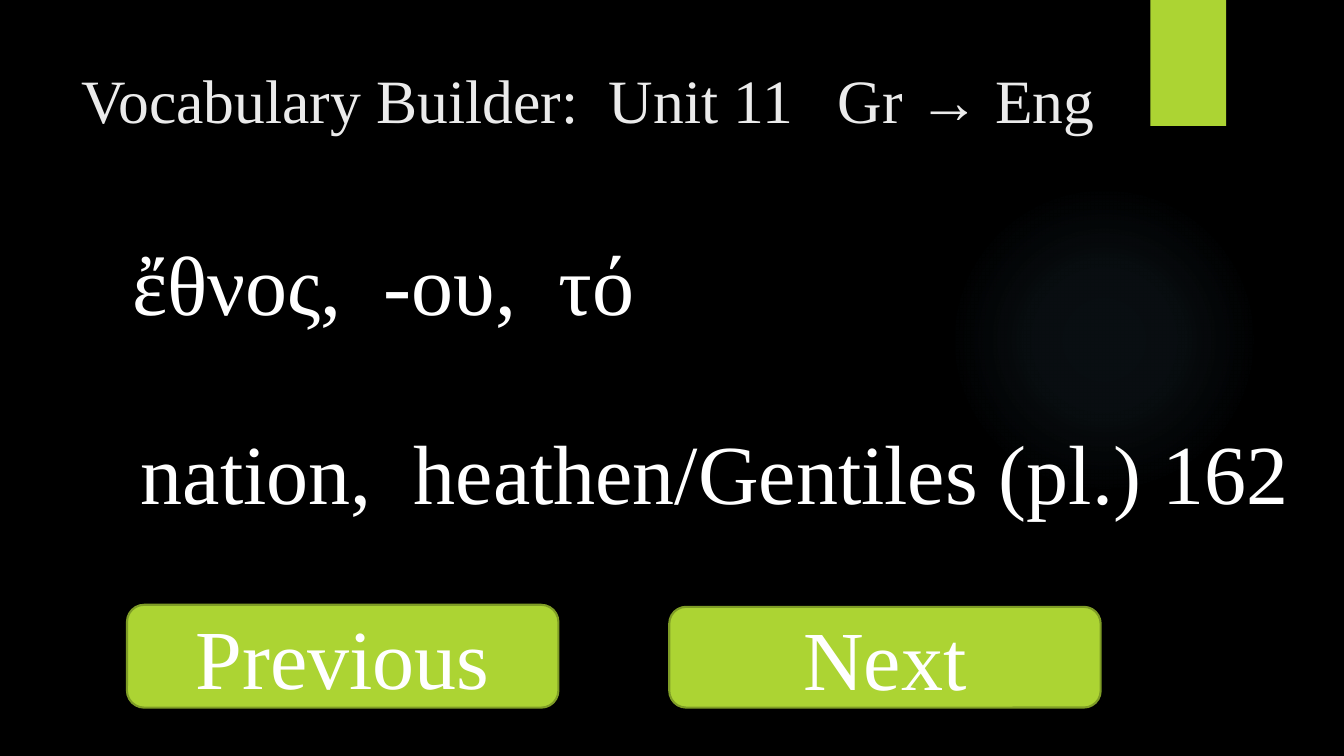
from lxml import etree
from pptx import Presentation
from pptx.dml.color import RGBColor
from pptx.enum.shapes import MSO_SHAPE
from pptx.enum.text import MSO_ANCHOR, MSO_AUTO_SIZE, PP_ALIGN
from pptx.oxml.ns import qn
from pptx.util import Inches, Pt

RECTANGLE, ROUNDED, ELLIPSE = MSO_SHAPE.RECTANGLE, MSO_SHAPE.ROUNDED_RECTANGLE, MSO_SHAPE.OVAL
TOP, MIDDLE = MSO_ANCHOR.TOP, MSO_ANCHOR.MIDDLE
LEFT, CENTER = PP_ALIGN.LEFT, PP_ALIGN.CENTER
FIXED, GROW = MSO_AUTO_SIZE.NONE, MSO_AUTO_SIZE.SHAPE_TO_FIT_TEXT

COLORS = {
    "background": "000000",
    "accent": "ACD433",
    "outline": "7F9D26",
    "title": "EBEBEB",
    "text": "FFFFFF",
    "glow": "7AC4F0",
}


def rgb(name):
    return RGBColor.from_string(COLORS[name])


class VocabularyCard:
    """Style and current slide; places are percentages of the slide's size."""

    font = "Times New Roman"
    title_size = 44
    text_size = 60

    def __init__(self, deck):
        self.deck = deck
        self.slide = deck.slides.add_slide(deck.slide_layouts[1])
        background = self.slide.background.fill
        background.solid()
        background.fore_color.rgb = rgb("background")

    def place(self, left, top, width, height):
        wide, high = self.deck.slide_width, self.deck.slide_height
        return [int(share * side / 100) for share, side in
                zip((left, top, width, height), (wide, high, wide, high))]

    def add_text(self, box, text, size=text_size, color="text", align=LEFT,
                 anchor=TOP, wrap=True, fit=FIXED, tab=None):
        frame = box.text_frame
        frame.word_wrap = wrap
        frame.auto_size = fit
        frame.vertical_anchor = anchor
        para = frame.paragraphs[0]
        para.alignment = align
        para.space_before = Pt(0)
        properties = para._p.get_or_add_pPr()
        properties.set("marL", "0")
        properties.set("indent", "0")
        etree.SubElement(properties, qn("a:buNone"))
        if tab:
            stops = etree.SubElement(properties, qn("a:tabLst"))
            etree.SubElement(stops, qn("a:tab"), pos=str(Inches(tab)), algn="l")
        span = para.add_run()
        span.text = text
        span.font.name = self.font
        span.font.size = Pt(size)
        span.font.color.rgb = rgb(color)

    def placeholder(self, index, area, text, **style):
        box = self.slide.placeholders[index]
        box.left, box.top, box.width, box.height = self.place(*area)
        self.add_text(box, text, **style)

    def text_box(self, area, text, **style):
        self.add_text(self.slide.shapes.add_textbox(*self.place(*area)), text, **style)

    def shape(self, kind, area):
        shape = self.slide.shapes.add_shape(kind, *self.place(*area))
        shape.shadow.inherit = False
        shape.fill.solid()
        shape.fill.fore_color.rgb = rgb("accent")
        shape.line.fill.background()
        return shape

    def send_to_back(self, shape):
        self.slide.shapes._spTree.insert(2, shape._element)

    def button(self, area, label):
        button = self.shape(ROUNDED, area)
        button.line.color.rgb = rgb("outline")
        button.line.width = Pt(1.5)
        self.add_text(button, label, align=CENTER, anchor=MIDDLE)

    def ribbon(self, area):
        self.send_to_back(self.shape(RECTANGLE, area))

    def glow(self, area, stops):
        glow = self.shape(ELLIPSE, area)
        gradient = etree.Element(qn("a:gradFill"), rotWithShape="1")
        stop_list = etree.SubElement(gradient, qn("a:gsLst"))
        for position, opacity in stops:
            stop = etree.SubElement(stop_list, qn("a:gs"), pos=str(position * 1000))
            color = etree.SubElement(stop, qn("a:srgbClr"), val=COLORS["glow"])
            etree.SubElement(color, qn("a:alpha"), val=str(opacity * 1000))
        circle = etree.SubElement(gradient, qn("a:path"), path="circle")
        center = {side: "50000" for side in "ltrb"}
        etree.SubElement(circle, qn("a:fillToRect"), **center)
        solid = glow._element.spPr.find(qn("a:solidFill"))
        solid.getparent().replace(solid, gradient)
        self.send_to_back(glow)


def main():
    deck = Presentation()
    deck.slide_width, deck.slide_height = Inches(13.33), Inches(7.5)
    card = VocabularyCard(deck)

    # Backdrop
    card.ribbon((85.6, 0, 5.63, 16.67))
    card.glow((70.59, 24.4, 23.1, 41.07), [(0, 7), (36, 6), (69, 0)])

    # Title, Greek word and its meaning
    card.placeholder(0, (5.33, 6.67, 81.25, 12.8),
                     "Vocabulary Builder:  Unit 11\tGr → Eng",
                     size=card.title_size, color="title", anchor=MIDDLE, tab=7.66)
    card.placeholder(1, (9.08, 30, 73.37, 20.67), "ἔθνος,  -ου,  τό")
    card.text_box((9.75, 54.93, 90.55, 14.8), "nation,  heathen/Gentiles (pl.) 162",
                  wrap=False, fit=GROW)

    # Navigation buttons
    card.button((9.45, 80, 32.1, 13.6), "Previous")
    card.button((49.8, 80.27, 32.1, 13.33), "Next")

    deck.save("out.pptx")


if __name__ == "__main__":
    main()
